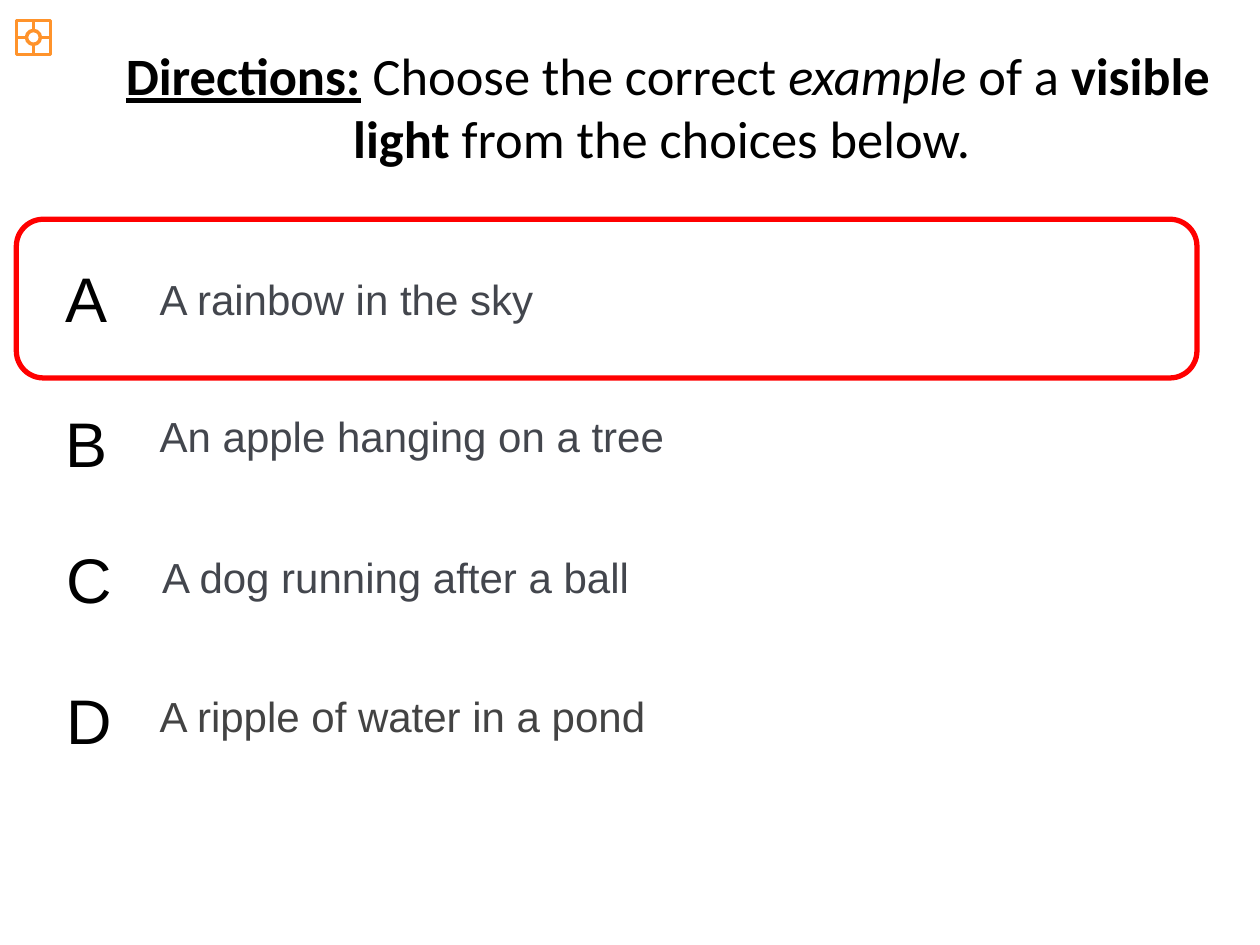
import pptx
import pptx.util
import pptx.dml.color
import pptx.enum.shapes
import pptx.enum.text
import pptx.oxml.ns
import lxml.etree

Cm = pptx.util.Cm
Pt = pptx.util.Pt
SHAPE = pptx.enum.shapes.MSO_SHAPE

COLOURS = {
    "black": "000000",
    "slate": "43464D",
    "grey": "434343",
    "orange": "FF932B",
    "red": "FF0000",
    "white": "FFFFFF",
}

DIRECTIONS = [
    ("Directions:", {"bold": True, "underline": True}),
    (" ", {"bold": True}),
    ("Choose the correct ", {}),
    ("example", {"italic": True}),
    (" of a ", {}),
    ("visible light ", {"bold": True}),
    ("from the choices below. ", {}),
]

CHOICES = [
    {"letter": "A", "text": "A rainbow in the sky", "letter_at": (1.07, 5.11),
     "text_at": (2.97, 5.38), "colour": "slate", "spacing": 1.0},
    {"letter": "B", "text": "An apple hanging on a tree", "letter_at": (1.07, 8.03),
     "text_at": (2.97, 8.15), "colour": "slate", "spacing": 1.0},
    {"letter": "C", "text": "A dog running after a ball", "letter_at": (1.09, 10.77),
     "text_at": (3.02, 10.9), "colour": "slate", "spacing": 1.1},
    {"letter": "D", "text": "A ripple of water in a pond", "letter_at": (1.09, 13.61),
     "text_at": (2.97, 13.79), "colour": "grey", "spacing": 1.0},
]

ICON_LEFT, ICON_TOP, ICON_SIZE, RING_SIZE = 0.33, 0.41, 0.69, 0.28


def colour(name):
    return pptx.dml.color.RGBColor.from_string(COLOURS[name])


def add_span(para, text, font, size, tint, **style):
    span = para.add_run()
    span.text = text
    span.font.name = font
    span.font.size = Pt(size)
    span.font.color.rgb = colour(tint)
    for key, value in style.items():
        setattr(span.font, key, value)


def add_text(page, at, size, text, points, tint, spacing=1.0):
    box = page.shapes.add_textbox(*map(Cm, at + size))
    box.text_frame.word_wrap = True
    para = box.text_frame.paragraphs[0]
    para.line_spacing = spacing
    add_span(para, text, "Arial", points, tint)


def add_outline(page, kind, at, size, tint, width, fill=None):
    shape = page.shapes.add_shape(kind, *map(Cm, at + size))
    shape.shadow.inherit = False
    shape.line.color.rgb = colour(tint)
    shape.line.width = Pt(width)
    if fill:
        shape.fill.solid()
        shape.fill.fore_color.rgb = colour(fill)
    else:
        shape.fill.background()
    return shape


def add_spoke(page, start, end):
    spoke = page.shapes.add_connector(
        pptx.enum.shapes.MSO_CONNECTOR.STRAIGHT, *map(Cm, start + end))
    spoke.line.color.rgb = colour("orange")
    spoke.line.width = Pt(2)
    lxml.etree.SubElement(spoke._element.spPr, pptx.oxml.ns.qn("a:effectLst"))


def add_icon(page):
    half, ring = ICON_SIZE / 2, RING_SIZE / 2
    x, y = ICON_LEFT + half, ICON_TOP + half
    add_outline(page, SHAPE.RECTANGLE, (ICON_LEFT, ICON_TOP),
                (ICON_SIZE, ICON_SIZE), "orange", 2)
    for dx, dy in [(0, -1), (0, 1), (-1, 0), (1, 0)]:
        add_spoke(page, (x + dx * half, y + dy * half), (x + dx * ring, y + dy * ring))
    add_outline(page, SHAPE.OVAL, (x - ring, y - ring),
                (RING_SIZE, RING_SIZE), "orange", 2, "white")


def add_title(page):
    title = page.shapes.title
    title.left, title.top, title.width, title.height = map(Cm, (2.06, 0.74, 22.81, 2.82))
    frame = title.text_frame
    frame.word_wrap = True
    frame.auto_size = pptx.enum.text.MSO_AUTO_SIZE.NONE
    frame.vertical_anchor = pptx.enum.text.MSO_ANCHOR.TOP
    para = frame.paragraphs[0]
    para.alignment = pptx.enum.text.PP_ALIGN.CENTER
    for text, style in DIRECTIONS:
        add_span(para, text, "Calibri", 30, "black", **style)


def main():
    deck = pptx.Presentation()
    deck.slide_width, deck.slide_height = Cm(25.4), Cm(19.05)
    page = deck.slides.add_slide(deck.slide_layouts[5])
    add_icon(page)
    add_title(page)
    for choice in CHOICES:
        add_text(page, choice["text_at"], (21.87, 1.28), choice["text"], 24,
                 choice["colour"], choice["spacing"])
        add_text(page, choice["letter_at"], (1.45, 1.8), choice["letter"], 36, "black")
    frame = add_outline(page, SHAPE.ROUNDED_RECTANGLE, (0.33, 4.42), (23.8, 3.2), "red", 3)
    frame.adjustments[0] = 0.17
    deck.save("out.pptx")


if __name__ == "__main__":
    main()
